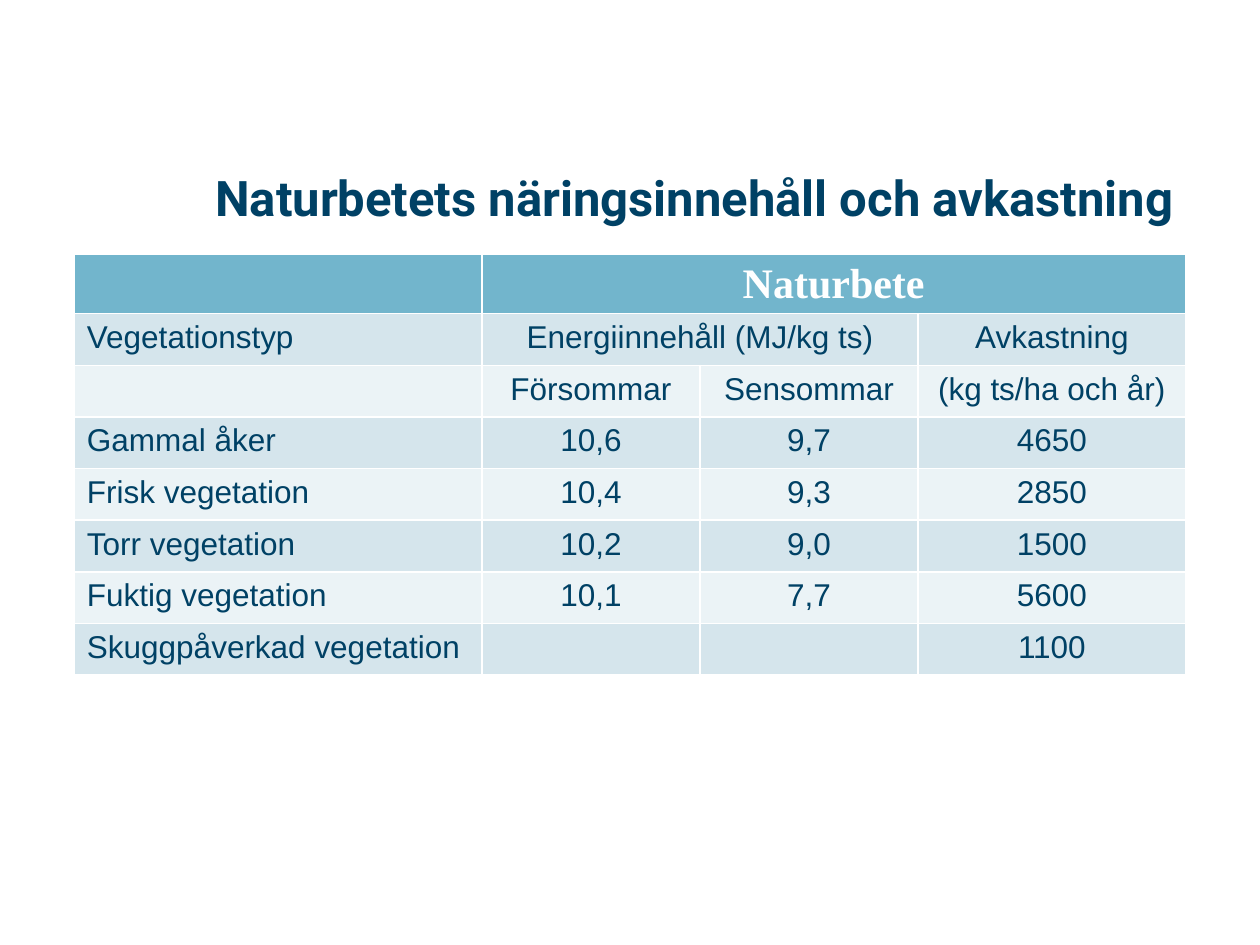
import pptx
import pptx.dml.color
import pptx.enum.text
import pptx.util

ALIGN = pptx.enum.text.PP_ALIGN
MIDDLE = pptx.enum.text.MSO_ANCHOR.MIDDLE
NAVY, WHITE, HEADER_BLUE = "004165", "FFFFFF", "72B5CC"
BANDS = ("D5E5EC", "EBF3F6")
COLUMN_WIDTHS = (3.23, 1.73, 1.73, 2.12)
ROW_HEIGHT = 0.41
ROWS = (
    ("", "Naturbete", "", ""),
    ("Vegetationstyp", "Energiinnehåll (MJ/kg ts)", "", "Avkastning"),
    ("", "Försommar", "Sensommar", "(kg ts/ha och år)"),
    ("Gammal åker", "10,6", "9,7", "4650"),
    ("Frisk vegetation", "10,4", "9,3", "2850"),
    ("Torr vegetation", "10,2", "9,0", "1500"),
    ("Fuktig vegetation", "10,1", "7,7", "5600"),
    ("Skuggpåverkad vegetation", "", "", "1100"),
)


def color(value):
    """Turn a hex string into a colour."""
    return pptx.dml.color.RGBColor.from_string(value)


def format_paragraph(paragraph, name, size, value, bold, alignment):
    """Set the font and alignment of a paragraph."""
    paragraph.alignment = alignment
    font = paragraph.font
    font.name, font.size, font.bold = name, pptx.util.Pt(size), bold
    font.color.rgb = color(value)


def place_title(slide, text, left, top, width, height):
    """Move and format the title placeholder."""
    title = slide.shapes.title
    title.left, title.top, title.width, title.height = left, top, width, height
    frame = title.text_frame
    frame.text = text
    frame.word_wrap = True
    frame.vertical_anchor = MIDDLE
    format_paragraph(frame.paragraphs[0], "Roboto", 28, NAVY, True, ALIGN.RIGHT)


def fill_cell(cell, text, row, column):
    """Write one cell with the look of its row and column."""
    header = row == 0
    cell.fill.solid()
    cell.fill.fore_color.rgb = color(HEADER_BLUE if header else BANDS[(row - 1) % 2])
    cell.text = text
    name, size = ("Times New Roman", 24) if header else ("Arial", 18)
    format_paragraph(cell.text_frame.paragraphs[0], name, size,
                     WHITE if header else NAVY, header,
                     ALIGN.CENTER if column else ALIGN.LEFT)


def place_table(slide, left, top, width, height):
    """Add the pasture table, its columns shared out over the width."""
    table = slide.shapes.add_table(
        len(ROWS), len(COLUMN_WIDTHS), left, top, width, height).table
    for column, share in zip(table.columns, COLUMN_WIDTHS):
        column.width = int(width * share / sum(COLUMN_WIDTHS))
    for row, texts in enumerate(ROWS):
        table.rows[row].height = pptx.util.Inches(ROW_HEIGHT)
        for column, text in enumerate(texts):
            fill_cell(table.cell(row, column), text, row, column)
    table.cell(0, 1).merge(table.cell(0, 3))
    table.cell(1, 1).merge(table.cell(1, 2))


def main():
    """Build and save the slide."""
    inches = pptx.util.Inches
    presentation = pptx.Presentation()
    presentation.slide_width, presentation.slide_height = inches(10), inches(7.5)
    slide = presentation.slides.add_slide(presentation.slide_layouts[5])
    left, width = inches(0.59), inches(8.82)
    place_title(slide, "Naturbetets näringsinnehåll och avkastning",
                left, inches(1.27), width, inches(0.59))
    place_table(slide, left, inches(2.02), width, inches(ROW_HEIGHT * len(ROWS)))
    presentation.save("out.pptx")


if __name__ == "__main__":
    main()
